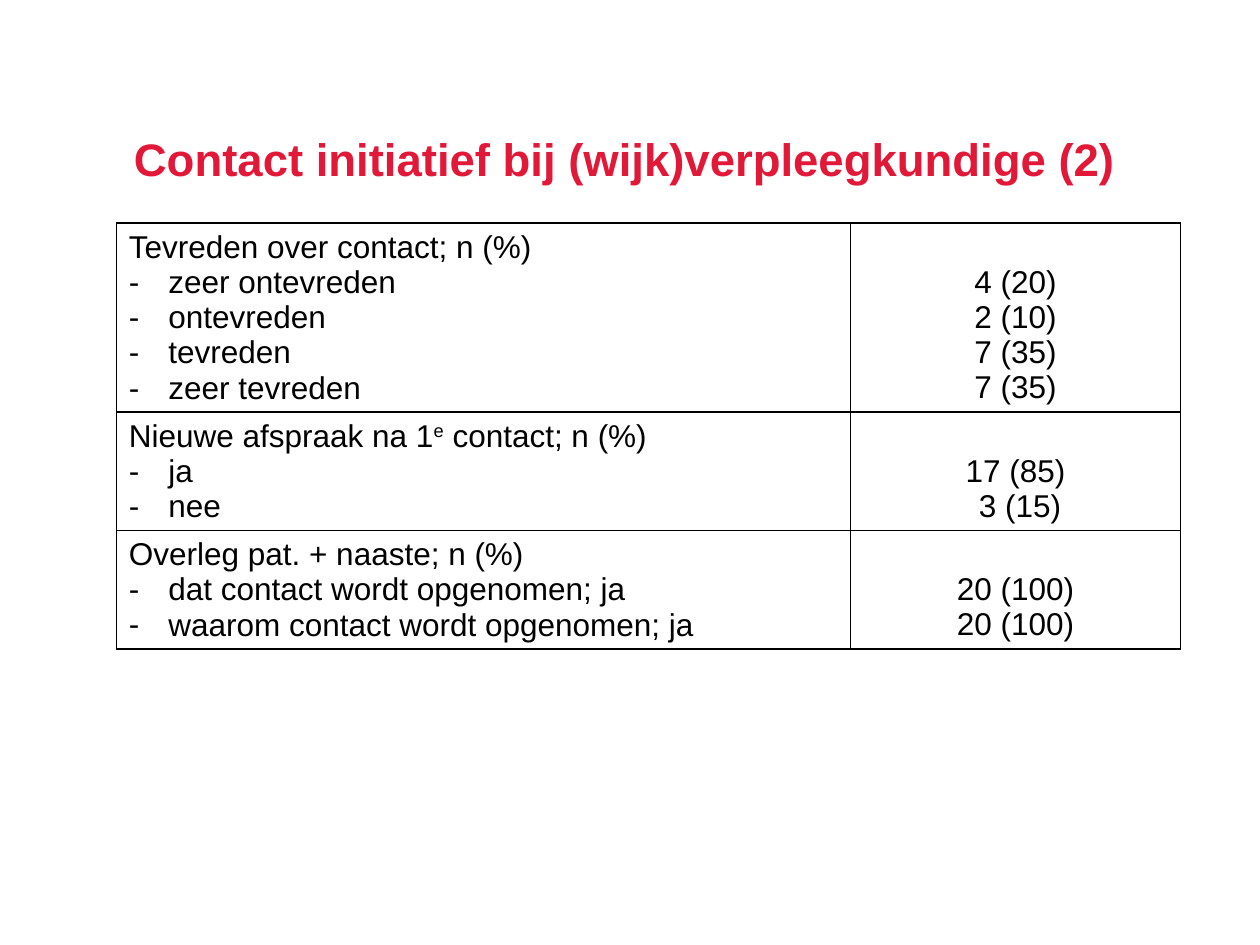
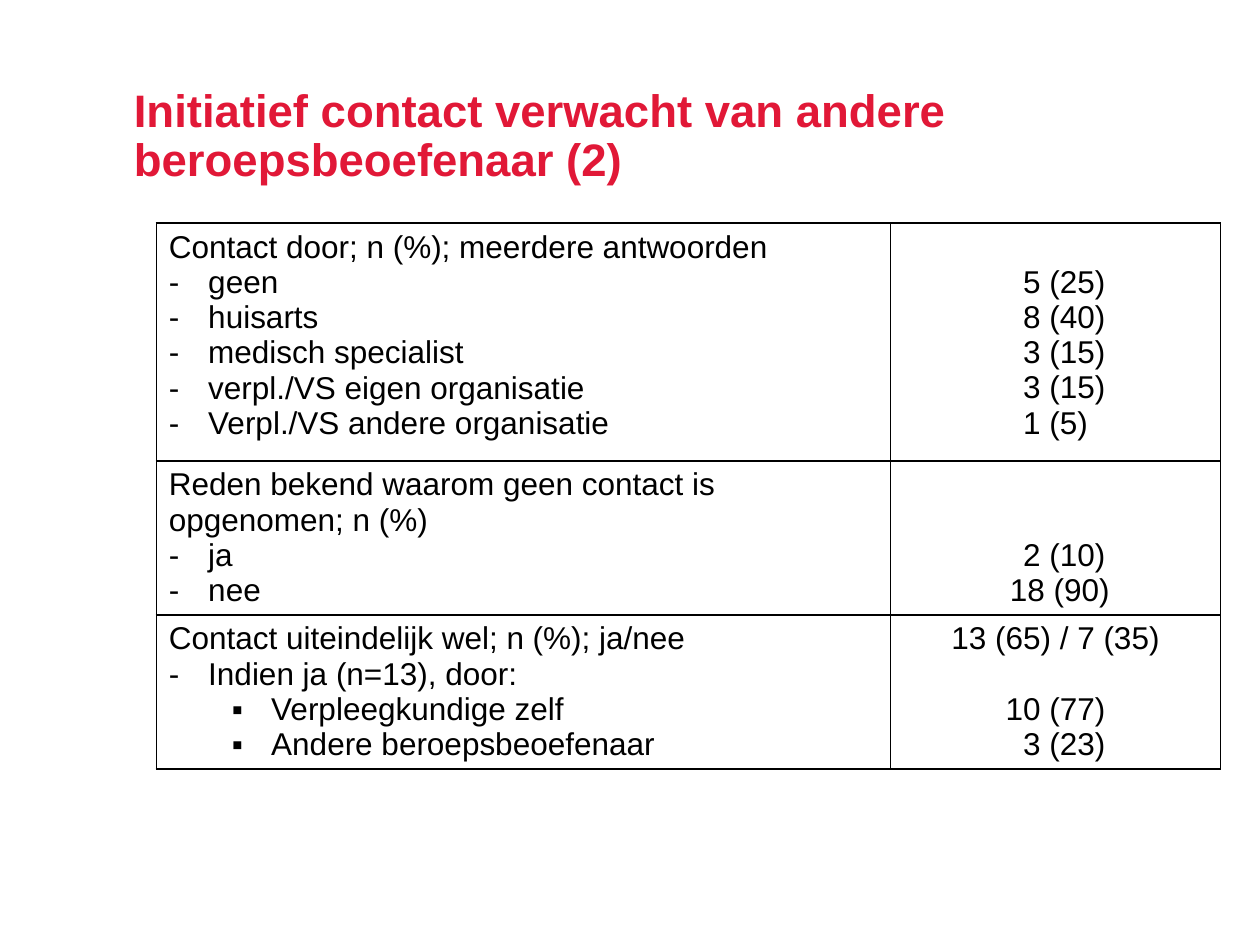
from lxml.etree import SubElement
from pptx import Presentation
from pptx.dml.color import RGBColor
from pptx.enum.text import MSO_ANCHOR as Anchor, MSO_AUTO_SIZE as AutoSize, PP_ALIGN as Align
from pptx.oxml.ns import qn
from pptx.util import Pt

COLOURS = {"title": "E11837", "text": "000000", "border": "000000"}
FONT = "Arial"
LINE_HEIGHT = 20.1
SPACE_WIDTH = 5
CELL_MARGIN = 3.6
HANGING = 22.5
BULLETS = {1: ("-", 22.5), 2: ("▪", 58.5)}  # level: character, left margin
COLUMN_WIDTHS = (419.5, 188.7)

# A row holds its height, its labels (level, text) and its values
# (lines left open above, space widths indented, text). ^ marks superscript.
SLIDES = [
    ("Contact initiatief bij (wijk)verpleegkundige (2)", 66.5, [
        (108,
         [(0, "Tevreden over contact; n (%)"), (1, "zeer ontevreden"),
          (1, "ontevreden"), (1, "tevreden"), (1, "zeer tevreden")],
         [(1, 0, "4 (20)"), (0, 0, "2 (10)"), (0, 0, "7 (35)"), (0, 0, "7 (35)")]),
        (67.7,
         [(0, "Nieuwe afspraak na 1^e^ contact; n (%)"), (1, "ja"), (1, "nee")],
         [(1, 0, "17 (85)"), (0, 1, "3 (15)")]),
        (67.7,
         [(0, "Overleg pat. + naaste; n (%)"), (1, "dat contact wordt opgenomen; ja"),
          (1, "waarom contact wordt opgenomen; ja")],
         [(1, 0, "20 (100)"), (0, 0, "20 (100)")]),
    ]),
    ("Initiatief contact verwacht van andere beroepsbeoefenaar (2)", 89.3, [
        (136,
         [(0, "Contact door; n (%); meerdere antwoorden"), (1, "geen"), (1, "huisarts"),
          (1, "medisch specialist"), (1, "verpl./VS eigen organisatie"),
          (1, "Verpl./VS andere organisatie")],
         [(1, 2, "5 (25)"), (0, 2, "8 (40)"), (0, 2, "3 (15)"), (0, 2, "3 (15)"),
          (0, 0, "1 (5)")]),
        (88,
         [(0, "Reden bekend waarom geen contact is opgenomen; n (%)"),
          (1, "ja"), (1, "nee")],
         [(2, 2, "2 (10)"), (0, 1, "18 (90)")]),
        (88,
         [(0, "Contact uiteindelijk wel; n (%); ja/nee"), (1, "Indien ja (n=13), door:"),
          (2, "Verpleegkundige zelf"), (2, "Andere beroepsbeoefenaar")],
         [(0, 0, "13 (65) / 7 (35)"), (1, 0, "10 (77)"), (0, 2, "3 (23)")]),
    ]),
]


def add_spans(para, text, size, colour, bold=False):
    """Add text run by run; parts between ^ marks become superscript."""
    for index, part in enumerate(text.split("^")):
        span = para.add_run()
        span.text = part
        span.font.name = FONT
        span.font.size = Pt(size)
        span.font.bold = bold
        span.font.color.rgb = RGBColor.from_string(COLOURS[colour])
        if index % 2:
            span._r.get_or_add_rPr().set("baseline", "30000")


def prepare_cell(cell):
    """Draw the four borders and clear the fill."""
    properties = cell._tc.get_or_add_tcPr()
    for side in ("lnL", "lnR", "lnT", "lnB"):
        line = SubElement(properties, qn(f"a:{side}"), w=str(Pt(1)))
        fill = SubElement(line, qn("a:solidFill"))
        SubElement(fill, qn("a:srgbClr"), val=COLOURS["border"])
    cell.fill.background()
    cell.margin_top = cell.margin_bottom = Pt(CELL_MARGIN)


deck = Presentation()
deck.slide_width, deck.slide_height = Pt(720), Pt(540)

for heading, table_left, rows in SLIDES:
    page = deck.slides.add_slide(deck.slide_layouts[5])

    title = page.shapes.title
    title.left, title.top, title.width, title.height = Pt(76.5), Pt(70.5), Pt(598.5), Pt(39.5)
    frame = title.text_frame
    frame.auto_size = AutoSize.NONE
    frame.word_wrap = True
    frame.vertical_anchor = Anchor.BOTTOM
    frame.margin_left = 0
    para = frame.paragraphs[0]
    para.alignment = Align.LEFT
    para.line_spacing = 0.9
    add_spans(para, heading, 26, "title", bold=True)

    table = page.shapes.add_table(
        len(rows), 2, Pt(table_left), Pt(127.5),
        Pt(sum(COLUMN_WIDTHS)), Pt(sum(row[0] for row in rows))).table
    table.first_row = table.horz_banding = False
    for column, width in zip(table.columns, COLUMN_WIDTHS):
        column.width = Pt(width)

    for row_index, (height, labels, values) in enumerate(rows):
        table.rows[row_index].height = Pt(height)
        label_cell, value_cell = table.rows[row_index].cells
        prepare_cell(label_cell)
        prepare_cell(value_cell)

        for index, (level, text) in enumerate(labels):
            frame = label_cell.text_frame
            para = frame.add_paragraph() if index else frame.paragraphs[0]
            if level:
                character, left_margin = BULLETS[level]
                para.level = level - 1
                properties = para._p.get_or_add_pPr()
                properties.set("marL", str(Pt(left_margin)))
                properties.set("indent", str(-Pt(HANGING)))
                SubElement(properties, qn("a:buFont"), typeface=FONT)
                SubElement(properties, qn("a:buChar"), char=character)
            add_spans(para, text, 18, "text")

        for index, (open_lines, spaces, text) in enumerate(values):
            frame = value_cell.text_frame
            para = frame.add_paragraph() if index else frame.paragraphs[0]
            para.alignment = Align.CENTER
            para._p.get_or_add_pPr().set("marL", str(Pt(spaces * SPACE_WIDTH)))
            if index:
                para.space_before = Pt(open_lines * LINE_HEIGHT)
            else:
                value_cell.margin_top = Pt(CELL_MARGIN + open_lines * LINE_HEIGHT)
            add_spans(para, text, 18, "text")

deck.save("out.pptx")
